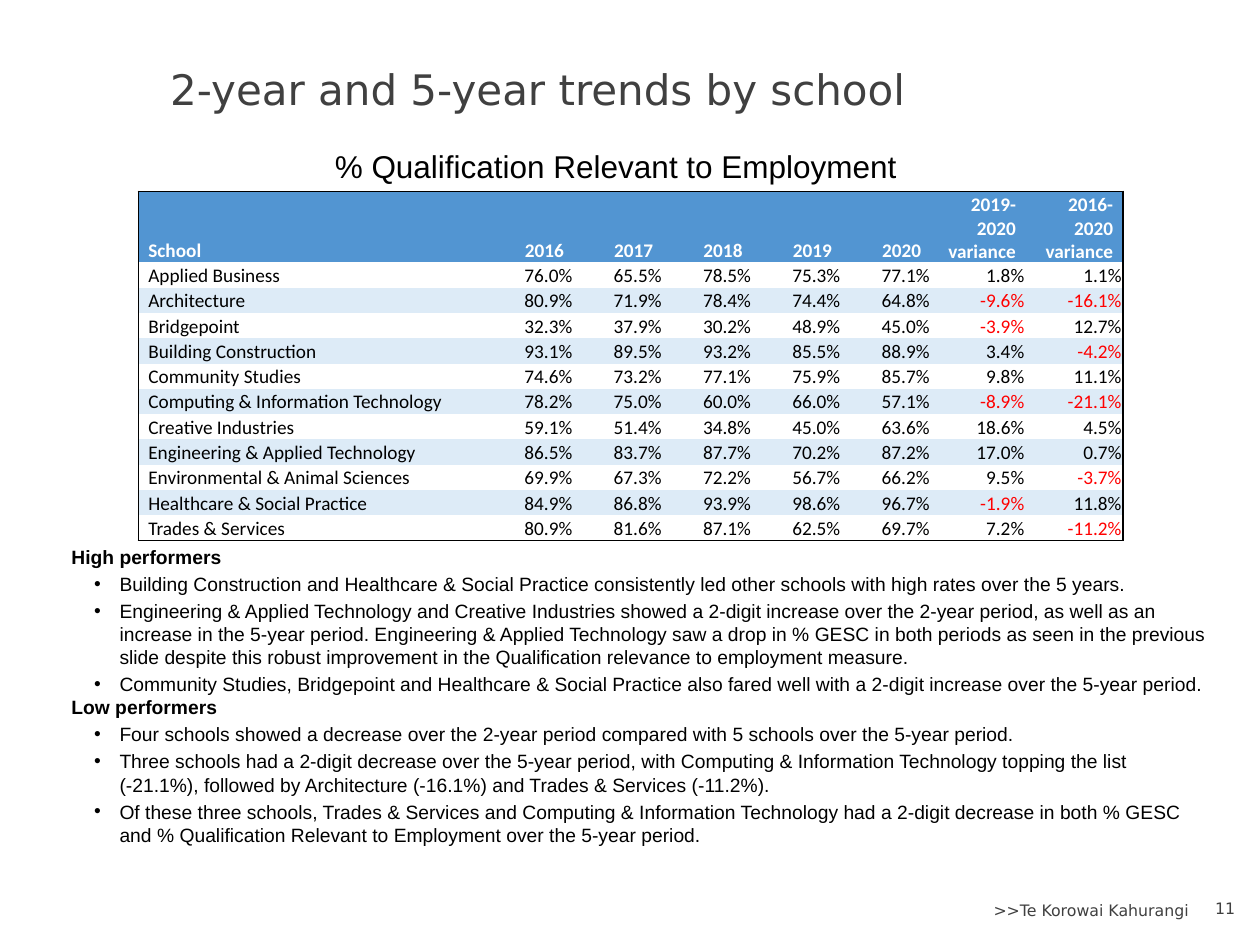
from lxml import etree
from pptx import Presentation, util as u
from pptx.dml.color import RGBColor
from pptx.enum import text
from pptx.oxml.ns import qn

left, right = text.PP_ALIGN.LEFT, text.PP_ALIGN.RIGHT
top, mid, low = (text.MSO_ANCHOR.TOP, text.MSO_ANCHOR.MIDDLE,
                 text.MSO_ANCHOR.BOTTOM)
fit, fixed = text.MSO_AUTO_SIZE.SHAPE_TO_FIT_TEXT, text.MSO_AUTO_SIZE.NONE


def paint(fill, shade):
    """Fill a cell or a font with a solid hex colour."""
    fill.solid()
    fill.fore_color.rgb = RGBColor.from_string(shade)


def write(para, words, shade, align=left, **form):
    """Add one run; form holds the font attributes."""
    para.alignment = align
    run = para.add_run()
    run.text = words
    for key, val in form.items():
        setattr(run.font, key, val)
    paint(run.font.fill, shade)


deck = Presentation()
deck.slide_width, deck.slide_height = u.Cm(25.4), u.Cm(19.05)
slide = deck.slides.add_slide(deck.slide_layouts[6])

# Title, caption, footer and slide number
labels = [
    ("2-year and 5-year trends by school", (3.18, 1.07, 19.99, 1.42),
     24, "DejaVu Sans", "404040", left, mid, fixed),
    ("% Qualification Relevant to Employment", (6.5, 2.84, 11.99, 1.02),
     18, "Arial", "000000", left, top, fit),
    (">>Te Korowai Kahurangi", (13.67, 18.03, 10.54, 0.64),
     9, "DejaVu Sans", "404040", right, mid, fit),
    ("11", (23.98, 17.98, 1.17, 0.64),
     9, "DejaVu Sans", "404040", right, mid, fit),
]
for words, place, size, face, shade, align, anchor, grow in labels:
    frame = slide.shapes.add_textbox(*map(u.Cm, place)).text_frame
    for key, val in {"word_wrap": True, "auto_size": grow,
                     "vertical_anchor": anchor}.items():
        setattr(frame, key, val)
    write(frame.paragraphs[0], words, shade, align, name=face, size=u.Pt(size))

# Table of rates by school
head = ["School", "2016", "2017", "2018", "2019", "2020",
        "2019-2020 variance", "2016-2020 variance"]
rates = [
    ("Applied Business", 76.0, 65.5, 78.5, 75.3, 77.1, 1.8, 1.1),
    ("Architecture", 80.9, 71.9, 78.4, 74.4, 64.8, -9.6, -16.1),
    ("Bridgepoint", 32.3, 37.9, 30.2, 48.9, 45.0, -3.9, 12.7),
    ("Building Construction", 93.1, 89.5, 93.2, 85.5, 88.9, 3.4, -4.2),
    ("Community Studies", 74.6, 73.2, 77.1, 75.9, 85.7, 9.8, 11.1),
    ("Computing & Information Technology",
     78.2, 75.0, 60.0, 66.0, 57.1, -8.9, -21.1),
    ("Creative Industries", 59.1, 51.4, 34.8, 45.0, 63.6, 18.6, 4.5),
    ("Engineering & Applied Technology",
     86.5, 83.7, 87.7, 70.2, 87.2, 17.0, 0.7),
    ("Environmental & Animal Sciences",
     69.9, 67.3, 72.2, 56.7, 66.2, 9.5, -3.7),
    ("Healthcare & Social Practice",
     84.9, 86.8, 93.9, 98.6, 96.7, -1.9, 11.8),
    ("Trades & Services", 80.9, 81.6, 87.1, 62.5, 69.7, 7.2, -11.2),
]
rows = [head] + [[name] + [f"{val:.1f}%" for val in vals]
                 for name, *vals in rates]
wide = [6.98] + [1.8] * 5 + [1.91, 1.96]
grid = slide.shapes.add_table(
    len(rows), len(head), u.Cm(2.79), u.Cm(3.86),
    u.Cm(sum(wide)), u.Cm(7.01)).table
grid.horz_banding = False
plain = "{2D5ABB26-0587-4C30-8999-92F81FD0307C}"
grid._tbl.tblPr.find(qn("a:tableStyleId")).text = plain
for col, width in zip(grid.columns, wide):
    col.width = u.Cm(width)

last, end = len(rows) - 1, len(head) - 1
for r, row in enumerate(rows):
    grid.rows[r].height = u.Cm(0.51 if r else 1.02)
    for c, words in enumerate(row):
        cell = grid.cell(r, c)
        side = u.Cm(0.03 if r and c else 0.2)
        for key, val in {"margin_left": side, "margin_right": side,
                         "margin_top": u.Cm(0.03), "margin_bottom": 0,
                         "vertical_anchor": low}.items():
            setattr(cell, key, val)
        edges = {"lnL": c == 0, "lnR": c == end,
                 "lnT": r == 0, "lnB": r == last}
        for tag in (tag for tag, on in edges.items() if on):
            line = etree.SubElement(cell._tc.get_or_add_tcPr(),
                                    qn("a:" + tag), w=str(u.Pt(1)))
            solid = etree.SubElement(line, qn("a:solidFill"))
            etree.SubElement(solid, qn("a:srgbClr"), val="000000")
        if r == 0:
            paint(cell.fill, "5295D2")
        elif r % 2 == 0:
            paint(cell.fill, "DDEBF7")
        else:
            cell.fill.background()
        shade = "FFFFFF" if r == 0 else "000000"
        if words.startswith("-"):
            shade = "FF0000"
        write(cell.text_frame.paragraphs[0], words, shade,
              right if c else left,
              name="Calibri", size=u.Pt(11), bold=r == 0)

# Comments on the schools
notes = {
    "High performers": [
        "Building Construction and Healthcare & Social Practice consistently "
        "led other schools with high rates over the 5 years.",
        "Engineering & Applied Technology and Creative Industries showed a "
        "2-digit increase over the 2-year period, as well as an increase in "
        "the 5-year period. Engineering & Applied Technology saw a drop in "
        "% GESC in both periods as seen in the previous slide despite this "
        "robust improvement in the Qualification relevance to employment "
        "measure.",
        "Community Studies, Bridgepoint and Healthcare & Social Practice also "
        "fared well with a 2-digit increase over the 5-year period.",
    ],
    "Low performers": [
        "Four schools showed a decrease over the 2-year period compared with "
        "5 schools over the 5-year period.",
        "Three schools had a 2-digit decrease over the 5-year period, with "
        "Computing & Information Technology topping the list (-21.1%), "
        "followed by Architecture (-16.1%) and Trades & Services (-11.2%).",
        "Of these three schools, Trades & Services and Computing & "
        "Information Technology had a 2-digit decrease in both % GESC and "
        "% Qualification Relevant to Employment over the 5-year period.",
    ],
}
place = (1.19, 10.87, 23.47, 7.16)
frame = slide.shapes.add_textbox(*map(u.Cm, place)).text_frame
frame.word_wrap = True
lines = [(words, words == group) for group, points in notes.items()
         for words in [group] + points]
for i, (words, bold) in enumerate(lines):
    para = frame.add_paragraph() if i else frame.paragraphs[0]
    if not bold:
        props = para._p.get_or_add_pPr()
        props.set("marL", str(u.Cm(0.97)))
        props.set("indent", str(u.Cm(-0.51)))
        etree.SubElement(props, qn("a:buFont"), typeface="Arial")
        etree.SubElement(props, qn("a:buChar"), char="•")
        para.space_before = u.Pt(2.2)
    write(para, words, "000000", name="Arial", size=u.Pt(11), bold=bold)

deck.save("out.pptx")
